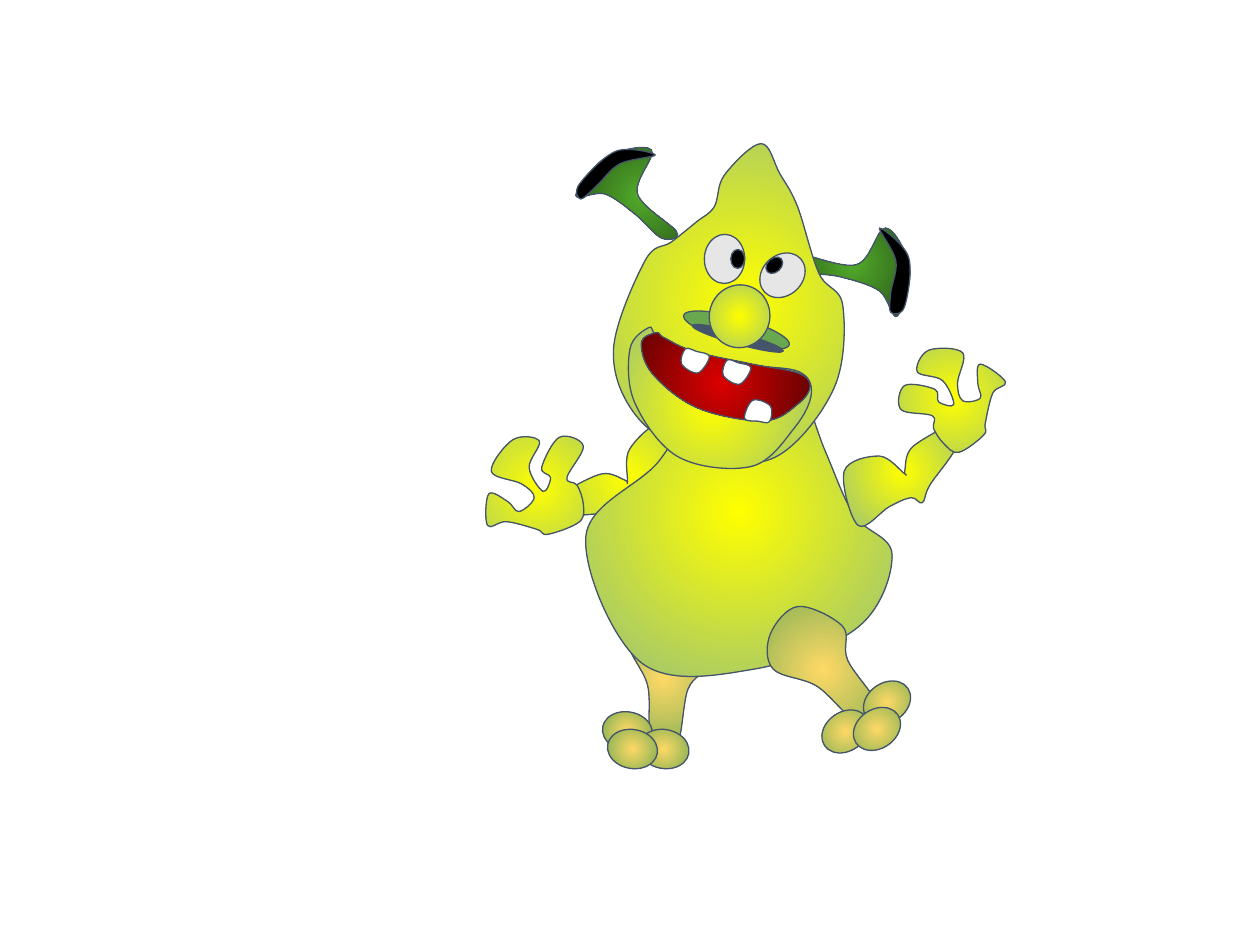
"""Draw a pear-shaped cartoon monster from smooth outlines and ovals."""
import math
from dataclasses import dataclass

import lxml.etree
import pptx
import pptx.dml.color
import pptx.enum.shapes
import pptx.oxml.ns
import pptx.util

Point = tuple[float, float]
Paint = str | tuple[str, str]

INK, BLACK, WHITE = "44546A", "000000", "FFFFFF"
EYE, LIP = "E7E6E6", "6AA84F"
SKIN = ("FFFF00", "92BC81")
LIMB = ("FFD966", "6AA84F")
HORN = ("51AB2A", "203E13")
MOUTH = ("DB0000", "540303")
TILT = 15.6


@dataclass
class Blob:
    """Closed smooth outline through its dots, in a frame turned by spin."""
    dots: list[Point]
    fill: Paint
    spin: float = 0


@dataclass
class Oval:
    """Ellipse given by its frame before it is turned."""
    left: float
    top: float
    width: float
    height: float
    fill: Paint
    spin: float = 0


Part = Blob | Oval


def qn(tag: str) -> str:
    return pptx.oxml.ns.qn(tag)


def rgb(code: str) -> pptx.dml.color.RGBColor:
    return pptx.dml.color.RGBColor.from_string(code)


def turn(dot: Point, angle: float) -> Point:
    cos, sin = math.cos(math.radians(angle)), math.sin(math.radians(angle))
    return dot[0] * cos - dot[1] * sin, dot[0] * sin + dot[1] * cos


def smooth(dots: list[Point]) -> list[Point]:
    """Give each dot handles a sixth of the way between its neighbours."""
    ring = [dots[0]]
    for i, (x, y) in enumerate(dots):
        (px, py), (nx, ny), (fx, fy) = (dots[(i + k) % len(dots)] for k in (-1, 1, 2))
        ring += [(x + (nx - px) / 6, y + (ny - py) / 6),
                 (nx - (fx - x) / 6, ny - (fy - y) / 6), (nx, ny)]
    return ring


def level(dots: list[Point], spin: float) -> list[Point]:
    """Turn an outline back to upright around the middle of its frame."""
    flat = [turn(dot, -spin) for dot in dots]
    mid = tuple((min(side) + max(side)) / 2 for side in zip(*flat))
    hub = turn(mid, spin)
    return [(x - mid[0] + hub[0], y - mid[1] + hub[1]) for x, y in flat]


def paint(shape, fill: Paint) -> None:
    shape.shadow.inherit = False
    shape.line.color.rgb = rgb(INK)
    shape.line.width = pptx.util.Pt(0.75)
    if isinstance(fill, str):
        shape.fill.solid()
        shape.fill.fore_color.rgb = rgb(fill)
        return
    shape.fill.gradient()
    for stop, code, place in zip(shape.fill.gradient_stops, fill, (0, 1)):
        stop.color.rgb = rgb(code)
        stop.position = place
    grad = shape._element.spPr.find(qn("a:gradFill"))
    grad.remove(grad.find(qn("a:lin")))
    glow = lxml.etree.SubElement(grad, qn("a:path"), {"path": "circle"})
    lxml.etree.SubElement(glow, qn("a:fillToRect"), dict.fromkeys("ltrb", "50000"))


def bend(shape) -> None:
    """Make each three line steps of an outline into one cubic arc."""
    route = next(shape._element.iter(qn("a:path")))
    steps = route.findall(qn("a:lnTo"))
    for first in range(0, len(steps), 3):
        arc = lxml.etree.Element(qn("a:cubicBezTo"))
        steps[first].addprevious(arc)
        for step in steps[first:first + 3]:
            arc.append(step[0])
            route.remove(step)


def draw(shapes, part: Part) -> None:
    if isinstance(part, Oval):
        frame = map(pptx.util.Inches, (part.left, part.top, part.width, part.height))
        shape = shapes.add_shape(pptx.enum.shapes.MSO_SHAPE.OVAL, *frame)
    else:
        ring = level(smooth(part.dots), part.spin)
        dots = [(pptx.util.Inches(x), pptx.util.Inches(y)) for x, y in ring]
        pen = shapes.build_freeform(*dots[0])
        pen.add_line_segments(dots[1:], close=True)
        shape = pen.convert_to_shape()
        bend(shape)
    shape.rotation = part.spin
    paint(shape, part.fill)


def stamp(form: list[Point], x: float, y: float, angle: float) -> list[Point]:
    """Place a form drawn around zero at a point, turned by an angle."""
    return [(x + a, y + b) for a, b in (turn(dot, angle) for dot in form)]


def leg(x: float, y: float, spin: float, toes: list[Point]) -> list[Part]:
    form = [(-.1, -.49), (-.28, -.28), (-.13, .06), (-.1, .46),
            (.1, .53), (.19, .09), (.35, -.13), (.21, -.49)]
    shin = Blob(stamp(form, x, y, spin - 10.3), LIMB, spin)
    return [shin] + [Oval(left, top, 0.4, 0.31, LIMB, spin) for left, top in toes]


def tooth(x: float, y: float, angle: float = 0) -> Blob:
    form = [(-.07, -.1), (-.1, .02), (.03, .09), (.12, -.04), (.02, -.08)]
    return Blob(stamp(form, x, y, angle), WHITE, TILT + angle)


def eye(left: float, top: float, look: Point, spin: float) -> list[Part]:
    return [Oval(left, top, 0.32, 0.39, EYE, spin),
            Oval(left + look[0], top + look[1], 0.11, 0.15, BLACK, spin)]


def ear(horn: list[Point], rim: list[Point], spin: float) -> list[Part]:
    return [Blob(horn, HORN, spin), Blob(rim, BLACK, spin)]


def arm(sleeve: Blob, hand: Blob) -> list[Part]:
    return [sleeve, hand]


def torso() -> list[Part]:
    return [Blob([(5.59, 3.07), (5.23, 3.66), (4.65, 4.26), (5.09, 5.26), (5.99, 5.31),
                  (6.82, 4.97), (7.08, 4.4), (6.78, 4.09), (6.55, 3.58), (6.31, 3),
                  (5.91, 2.69)], SKIN)]


def left_arm() -> list[Part]:
    sleeve = [(5.28, 3.36), (5, 3.56), (4.98, 3.82), (4.96, 3.81), (4.78, 3.76), (4.48, 3.89),
              (4.34, 3.9), (4.5, 4.08), (4.92, 4.06), (5.07, 4.08), (5.1, 3.97),
              (5.27, 3.84), (5.56, 3.7)]
    wrist = [(4.35, 4.24), (4.6, 4.14), (4.63, 4), (4.58, 3.85)]
    thumb = [(4.5, 3.79), (4.63, 3.54), (4.44, 3.47), (4.3, 3.71), (4.37, 3.79), (4.31, 3.9)]
    middle = [(4.2, 3.71), (4.28, 3.5), (4.07, 3.49), (3.9, 3.74), (4.14, 3.84), (4.24, 3.95)]
    little = [(4.12, 4.06), (4.03, 3.98), (3.88, 3.92), (3.87, 4.17), (4.02, 4.14), (4.26, 4.2)]
    return arm(Blob(sleeve, SKIN, 310.6), Blob(wrist + thumb + middle + little, SKIN, 325))


def right_arm() -> list[Part]:
    sleeve = [(6.7, 3.74), (6.98, 3.62), (7.18, 3.76), (7.18, 3.74), (7.23, 3.56), (7.48, 3.39),
              (7.55, 3.28), (7.6, 3.52), (7.38, 3.85), (7.32, 3.99), (7.23, 3.95),
              (7.06, 4.02), (6.81, 4.17)]
    wrist = [(7.81, 3.45), (7.61, 3.59), (7.49, 3.52), (7.41, 3.4)]
    thumb = [(7.4, 3.3), (7.15, 3.25), (7.18, 3.06), (7.42, 3.09), (7.45, 3.19), (7.57, 3.21)]
    middle = [(7.48, 3.02), (7.28, 2.95), (7.37, 2.78), (7.64, 2.8), (7.6, 3.04), (7.64, 3.18)]
    little = [(7.78, 3.16), (7.76, 3.04), (7.78, 2.89), (7.98, 3.03), (7.88, 3.12), (7.82, 3.36)]
    return arm(Blob(sleeve, SKIN, 354.3), Blob(wrist + thumb + middle + little, SKIN, 339.9))


def head() -> list[Part]:
    peak = [(6.33, 1.64), (6.19, 1.38), (6.04, 1.14), (5.75, 1.39), (5.67, 1.64), (5.53, 1.76)]
    cheek = [(5.33, 1.92), (5.12, 2.07), (4.87, 2.77), (5.05, 3.3), (5.53, 3.61),
             (6.15, 3.63), (6.62, 3.08), (6.69, 2.43), (6.5, 2.17)]
    jaw = [(5.15, 2.6), (5, 2.77), (5.04, 3.2), (5.39, 3.63), (5.97, 3.7), (6.31, 3.39),
           (6.44, 3.12), (6.34, 2.95), (5.96, 2.9), (5.46, 2.82), (5.21, 2.66)]
    grin = [(5.21, 2.64), (5.09, 2.72), (5.18, 2.97), (5.54, 3.24), (6.07, 3.34), (6.34, 3.2),
            (6.43, 3.06), (6.33, 2.96), (5.97, 2.89), (5.51, 2.79), (5.27, 2.68)]
    right = ear([(6.34, 2.02), (6.8, 2.1), (7.03, 1.81), (7.22, 2.13), (7.12, 2.51),
                 (6.98, 2.31), (6.68, 2.2), (6.38, 2.15)],
                [(6.98, 1.81), (7.21, 2.04), (7.18, 2.43), (7.07, 2.48), (7.07, 2.32),
                 (7.11, 2.07)], TILT)
    left = ear([(5.37, 1.84), (5.06, 1.54), (5.17, 1.19), (4.81, 1.25), (4.57, 1.55),
                (4.8, 1.54), (5.04, 1.7), (5.25, 1.89)],
               [(5.2, 1.23), (4.89, 1.2), (4.6, 1.46), (4.61, 1.58), (4.74, 1.47),
                (4.92, 1.3)], 37.8)
    eyes = eye(5.59, 1.86, (.21, .12), 1.5) + eye(6.05, 1.99, (.04, .04), 47.2)
    nose = [Oval(5.41, 2.52, 0.87, 0.2, LIP, TILT), Oval(5.48, 2.64, 0.75, 0.09, INK, TILT),
            Oval(5.63, 2.26, 0.48, 0.5, SKIN, TILT)]
    teeth = [tooth(5.51, 2.87), tooth(5.84, 2.96), tooth(6.02, 3.26, 170)]
    return [*right, Blob(peak + cheek, SKIN, TILT), *eyes, *nose,
            Blob(jaw, SKIN, TILT), Blob(grin, MOUTH, TILT), *teeth, *left]


def main() -> None:
    deck = pptx.Presentation()
    deck.slide_width, deck.slide_height = pptx.util.Inches(10), pptx.util.Inches(7.5)
    slide = deck.slides.add_slide(deck.slide_layouts[6])
    left_leg = leg(5.27, 5.38, 10.3, [(4.78, 5.65), (5.07, 5.79), (4.82, 5.79)])
    right_leg = leg(6.53, 5.31, 325.6, [(6.51, 5.65), (6.84, 5.42), (6.76, 5.63)])
    for limb in (left_arm(), left_leg, torso(), right_leg, right_arm(), head()):
        home = slide.shapes.add_group_shape().shapes if len(limb) > 1 else slide.shapes
        for part in limb:
            draw(home, part)
    deck.save("out.pptx")


if __name__ == "__main__":
    main()
